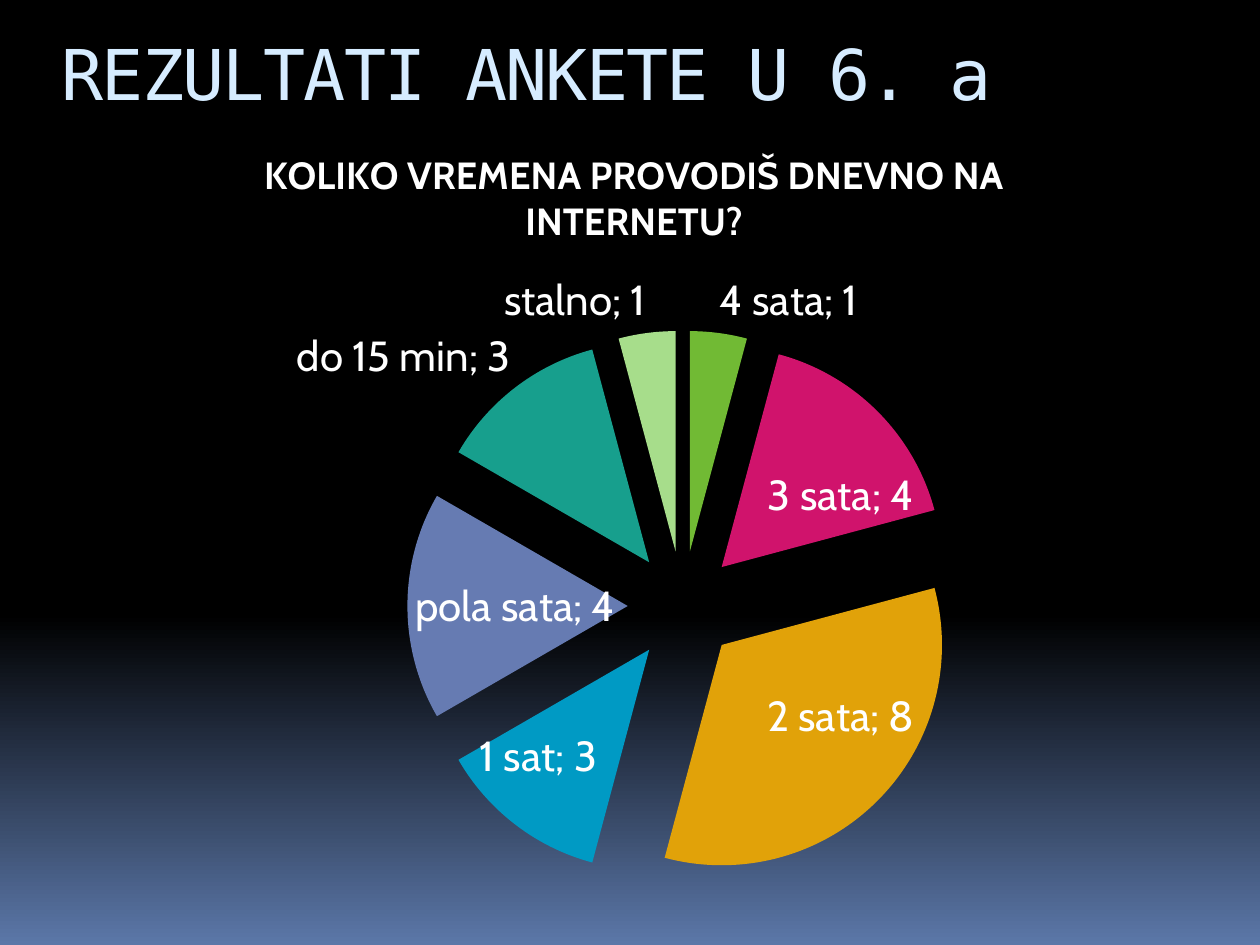
from copy import deepcopy
from pptx import Presentation
from pptx.chart.data import CategoryChartData
from pptx.dml.color import RGBColor
from pptx.enum.chart import XL_CHART_TYPE as ChartType
from pptx.enum.text import MSO_ANCHOR as Anchor, PP_ALIGN as Align
from pptx.util import Inches, Pt

WHITE = RGBColor(0xFF, 0xFF, 0xFF)
BLACK = RGBColor(0x00, 0x00, 0x00)
DUSK = RGBColor(0x5B, 0x77, 0xA8)
PALE_BLUE = RGBColor(0xD6, 0xEC, 0xFF)
GREEN = RGBColor(0x71, 0xBA, 0x34)
PINK = RGBColor(0xD0, 0x13, 0x6C)
GOLD = RGBColor(0xE1, 0xA2, 0x09)
CYAN = RGBColor(0x00, 0x9A, 0xC4)
INDIGO = RGBColor(0x66, 0x7B, 0xB2)
TEAL = RGBColor(0x17, 0x9F, 0x8D)
LIGHT_GREEN = RGBColor(0xA7, 0xDD, 0x8B)

ANSWERS = [
    ("4 sata", 1, GREEN),
    ("3 sata", 4, PINK),
    ("2 sata", 8, GOLD),
    ("1 sat", 3, CYAN),
    ("pola sata", 4, INDIGO),
    ("do 15 min", 3, TEAL),
    ("stalno", 1, LIGHT_GREEN),
]

deck = Presentation()
deck.slide_width, deck.slide_height = Inches(10), Inches(7.5)
page = deck.slides.add_slide(deck.slide_layouts[6])

backdrop = page.background.fill
backdrop.gradient()
backdrop.gradient_angle = 270
first_stop = page.element.xpath(".//a:gsLst/a:gs")[0]
first_stop.addnext(deepcopy(first_stop))
for stop, (share, color) in zip(backdrop.gradient_stops, [(0, BLACK), (0.65, BLACK), (1, DUSK)]):
    stop.color.rgb = color
    stop.position = share

box = page.shapes.add_textbox(Inches(0.39), Inches(0.16), Inches(9), Inches(0.69))
frame = box.text_frame
frame.word_wrap = True
frame.vertical_anchor = Anchor.TOP
frame.margin_top = Inches(0.08)
para = frame.paragraphs[0]
para.alignment = Align.LEFT
span = para.add_run()
span.text = "REZULTATI ANKETE U 6. a"
span.font.name = "DejaVu Sans Mono"
span.font.size = Pt(40)
span.font.color.rgb = PALE_BLUE
span.font._element.set("spc", "-100")

data = CategoryChartData()
data.categories = [answer for answer, count, color in ANSWERS]
data.add_series("Series 1", [count for answer, count, color in ANSWERS])
chart = page.shapes.add_chart(
    ChartType.PIE_EXPLODED, Inches(0.31), Inches(0.94), Inches(9.45), Inches(6.41), data
).chart
chart.font.name = "Cabin"
chart.font.size = Pt(18)
chart.font.color.rgb = WHITE
chart.has_legend = False

chart.has_title = True
chart.chart_title.include_in_layout = False
span = chart.chart_title.text_frame.paragraphs[0].add_run()
span.text = "KOLIKO VREMENA PROVODIŠ DNEVNO NA INTERNETU?"
span.font.name = "Cabin"
span.font.size = Pt(21.6)
span.font.bold = True
span.font.color.rgb = WHITE

plot = chart.plots[0]
plot.vary_by_categories = True
series = plot.series[0]
for explosion in chart.element.xpath(".//c:ser/c:explosion"):
    explosion.set("val", "25")
for index, (answer, count, color) in enumerate(ANSWERS):
    fill = series.points[index].format.fill
    fill.solid()
    fill.fore_color.rgb = color

labels = series.data_labels
labels.show_category_name = True
labels.show_value = True
labels.show_percentage = False
labels.font.name = "Cabin"
labels.font.size = Pt(24)
labels.font.color.rgb = WHITE

deck.save("out.pptx")
